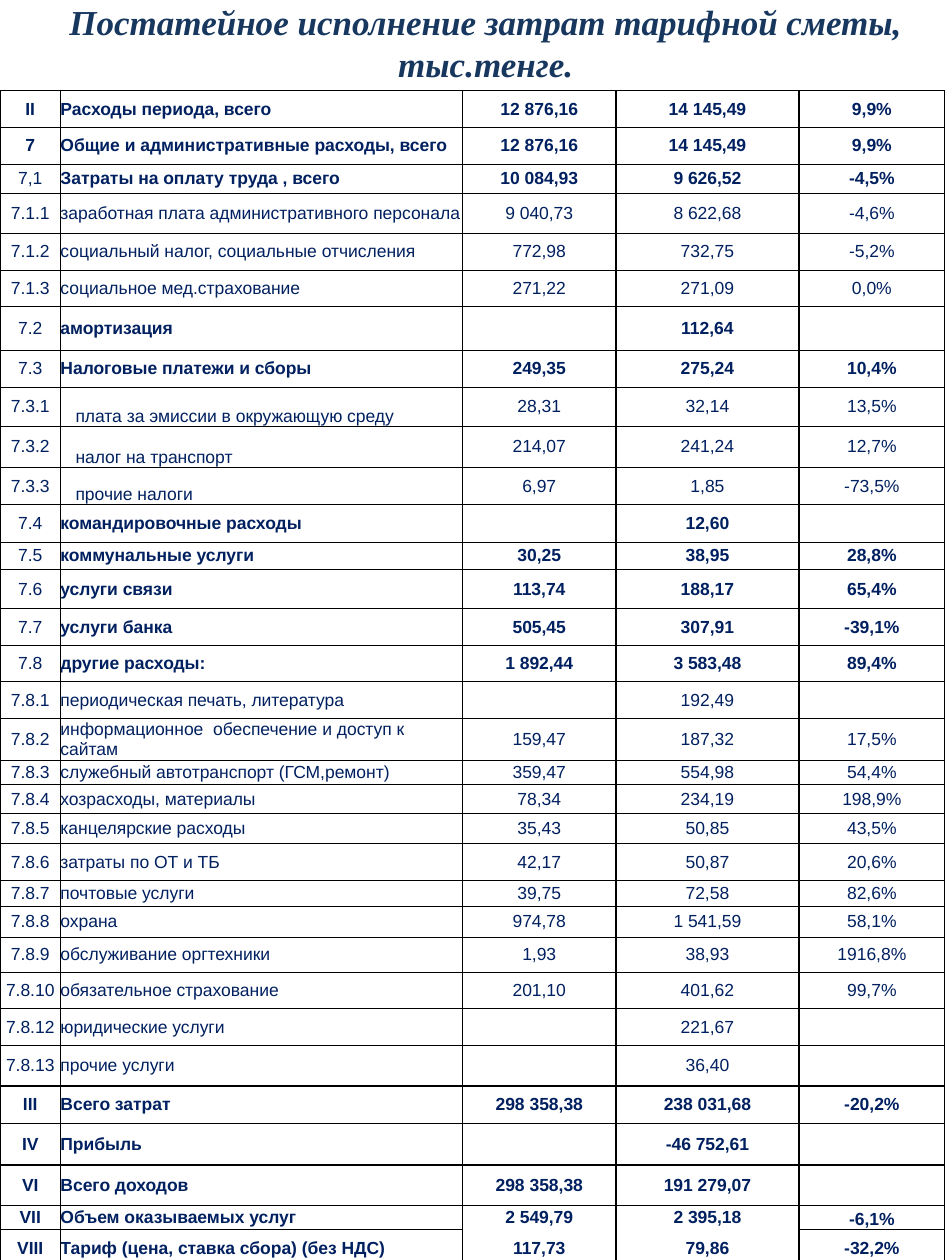
from dataclasses import dataclass

from lxml.etree import SubElement
from pptx import Presentation
from pptx.dml.color import RGBColor
from pptx.enum.text import MSO_ANCHOR, PP_ALIGN
from pptx.oxml import parse_xml
from pptx.oxml.ns import nsdecls, qn
from pptx.util import Pt


@dataclass(frozen=True)
class Theme:
    title_font: str = "Times New Roman"
    title_size: float = 20
    title_color: str = "17375E"
    table_font: str = "Arial"
    table_size: float = 10
    table_color: str = "002060"
    border_color: str = "000000"
    thin: float = 0.5
    thick: float = 1


THEME = Theme()
TITLE = "Постатейное исполнение затрат тарифной сметы, тыс.тенге."
COLUMN_WIDTHS = (34.56, 229.68, 87.84, 104.4, 83.52)
ITEM, PLAN, FACT, CHANGE = 1, 2, 3, 4

# Row height, code, expense item, plan, fact, change
EXPENSES = [
    (20.9, "II", "Расходы периода, всего", "12 876,16", "14 145,49", "9,9%"),
    (20.9, "7", "Общие и административные расходы, всего", "12 876,16", "14 145,49", "9,9%"),
    (16.6, "7,1", "Затраты на оплату труда , всего", "10 084,93", "9 626,52", "-4,5%"),
    (23.1, "7.1.1", "заработная плата административного персонала", "9 040,73", "8 622,68", "-4,6%"),
    (20.9, "7.1.2", "социальный налог, социальные отчисления", "772,98", "732,75", "-5,2%"),
    (20.9, "7.1.3", "социальное мед.страхование", "271,22", "271,09", "0,0%"),
    (25.2, "7.2", "амортизация", "", "112,64", ""),
    (20.9, "7.3", "Налоговые платежи и сборы", "249,35", "275,24", "10,4%"),
    (22.3, "7.3.1", "плата за эмиссии в окружающую среду", "28,31", "32,14", "13,5%"),
    (23.8, "7.3.2", "налог на транспорт", "214,07", "241,24", "12,7%"),
    (20.9, "7.3.3", "прочие налоги", "6,97", "1,85", "-73,5%"),
    (21.6, "7.4", "командировочные расходы", "", "12,60", ""),
    (15.8, "7.5", "коммунальные услуги", "30,25", "38,95", "28,8%"),
    (22.3, "7.6", "услуги связи", "113,74", "188,17", "65,4%"),
    (20.9, "7.7", "услуги банка", "505,45", "307,91", "-39,1%"),
    (20.9, "7.8", "другие расходы:", "1 892,44", "3 583,48", "89,4%"),
    (20.9, "7.8.1", "периодическая печать, литература", "", "192,49", ""),
    (23.1, "7.8.2", "информационное  обеспечение и доступ к сайтам", "159,47", "187,32", "17,5%"),
    (13.7, "7.8.3", "служебный автотранспорт (ГСМ,ремонт)", "359,47", "554,98", "54,4%"),
    (16.6, "7.8.4", "хозрасходы, материалы", "78,34", "234,19", "198,9%"),
    (17.3, "7.8.5", "канцелярские расходы", "35,43", "50,85", "43,5%"),
    (20.9, "7.8.6", "затраты по ОТ и ТБ", "42,17", "50,87", "20,6%"),
    (15.1, "7.8.7", "почтовые услуги", "39,75", "72,58", "82,6%"),
    (17.3, "7.8.8", "охрана", "974,78", "1 541,59", "58,1%"),
    (20.2, "7.8.9", "обслуживание оргтехники", "1,93", "38,93", "1916,8%"),
    (20.9, "7.8.10", "обязательное страхование", "201,10", "401,62", "99,7%"),
    (20.9, "7.8.12", "юридические услуги", "", "221,67", ""),
    (23.1, "7.8.13", "прочие услуги", "", "36,40", ""),
    (21.6, "III", "Всего затрат", "298 358,38", "238 031,68", "-20,2%"),
    (23.8, "IV", "Прибыль", "", "-46 752,61", ""),
    (23.1, "VI", "Всего доходов", "298 358,38", "191 279,07", ""),
    (13.7, "VII", "Объем оказываемых услуг", "2 549,79", "2 395,18", "-6,1%"),
    (21.6, "VIII", "Тариф (цена, ставка сбора) (без НДС)", "117,73", "79,86", "-32,2%"),
]


def apply_format(target, values):
    for name, value in values.items():
        setattr(target, name, value)


def write_text(frame, text, align, color, font_format):
    paragraph = frame.paragraphs[0]
    paragraph.alignment = align
    if text:
        run = paragraph.add_run()
        run.text = text
        apply_format(run.font, font_format)
        run.font.color.rgb = RGBColor.from_string(color)
    else:
        # Keeps an empty cell from stretching its row
        SubElement(paragraph._p, qn("a:endParaRPr"), sz=str(int(THEME.table_size * 100)))


def add_title(slide):
    title = slide.shapes.add_textbox(Pt(15.1), Pt(-3.6), Pt(524.9), Pt(55.4))
    apply_format(title.text_frame, {"word_wrap": True, "vertical_anchor": MSO_ANCHOR.MIDDLE})
    write_text(title.text_frame, TITLE, PP_ALIGN.CENTER, THEME.title_color, {
        "name": THEME.title_font, "size": Pt(THEME.title_size), "bold": True, "italic": True})


def border_widths(code, column):
    """Widths of the left, right, top and bottom borders; 0 hides one."""
    top = bottom = THEME.thin
    if code in ("III", "IV", "VI"):
        top = THEME.thick
    if code in ("7.8.13", "III", "IV", "VIII"):
        bottom = THEME.thick
    if column == CHANGE and code in ("VI", "VII", "VIII"):
        top = bottom = THEME.thick
    # Volume and tariff figures share an open block
    if column in (PLAN, FACT):
        top = 0 if code == "VIII" else top
        bottom = 0 if code == "VII" else bottom
    return {"lnL": THEME.thick, "lnR": THEME.thick, "lnT": top, "lnB": bottom}


def set_borders(cell, widths):
    properties = cell._tc.get_or_add_tcPr()
    for position, (edge, width) in enumerate(widths.items()):
        paint = (f'<a:solidFill><a:srgbClr val="{THEME.border_color}"/></a:solidFill>'
                 if width else "<a:noFill/>")
        properties.insert(position, parse_xml(
            f'<a:{edge} {nsdecls("a")} w="{int(Pt(width))}">{paint}</a:{edge}>'))


def fill_cell(cell, code, column, text):
    # Depth of the code decides the weight: sections, subtotals, details
    depth = code.count(".") + code.count(",")
    is_tax_detail = column == ITEM and code.startswith("7.3.")
    sits_low = is_tax_detail or (column == CHANGE and code == "VII")
    apply_format(cell, {
        "margin_left": Pt(8.64 if is_tax_detail else 0), "margin_right": 0,
        "margin_top": 0, "margin_bottom": 0,
        "vertical_anchor": MSO_ANCHOR.BOTTOM if sits_low else MSO_ANCHOR.MIDDLE})
    cell.fill.background()
    set_borders(cell, border_widths(code, column))
    align = PP_ALIGN.LEFT if column == ITEM else PP_ALIGN.CENTER
    write_text(cell.text_frame, text, align, THEME.table_color, {
        "name": THEME.table_font, "size": Pt(THEME.table_size),
        "bold": depth < (2 if column else 1)})


def add_expense_table(slide):
    height = sum(expense[0] for expense in EXPENSES)
    table = slide.shapes.add_table(len(EXPENSES), len(COLUMN_WIDTHS), 0, Pt(51.9),
                                   Pt(sum(COLUMN_WIDTHS)), Pt(height)).table
    apply_format(table, {"first_row": False, "horz_banding": False})
    for column, width in zip(table.columns, COLUMN_WIDTHS):
        column.width = Pt(width)
    for row, (row_height, *texts) in zip(table.rows, EXPENSES):
        row.height = Pt(row_height)
        for column, (cell, text) in enumerate(zip(row.cells, texts)):
            fill_cell(cell, texts[0], column, text)


def main():
    presentation = Presentation()
    apply_format(presentation, {"slide_width": Pt(540), "slide_height": Pt(720)})
    slide = presentation.slides.add_slide(presentation.slide_layouts[6])
    add_title(slide)
    add_expense_table(slide)
    presentation.save("out.pptx")


if __name__ == "__main__":
    main()
